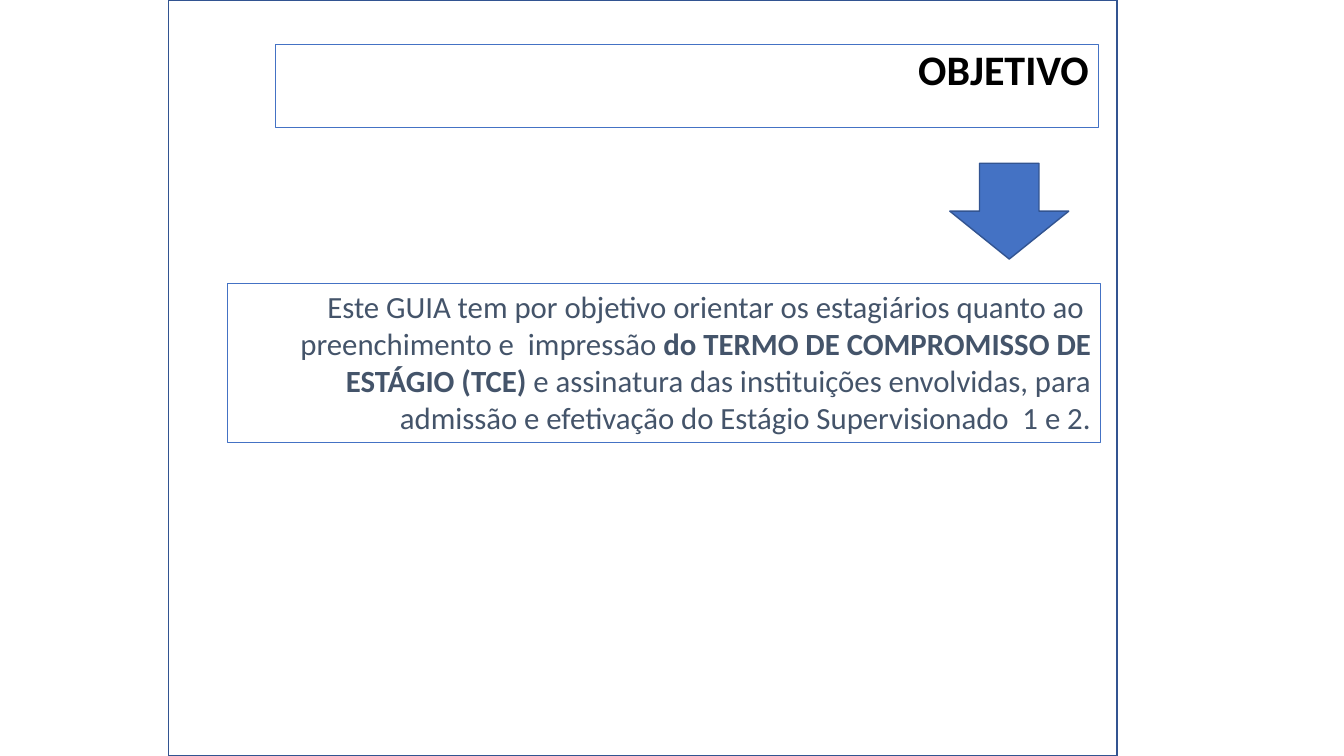
from pptx import Presentation
from pptx.dml.color import RGBColor
from pptx.enum.shapes import MSO_SHAPE
from pptx.enum.text import MSO_ANCHOR, PP_ALIGN
from pptx.util import Inches, Pt

RECT, DOWN_ARROW = MSO_SHAPE.RECTANGLE, MSO_SHAPE.DOWN_ARROW
TOP, RIGHT = MSO_ANCHOR.TOP, PP_ALIGN.RIGHT

# Content: paragraphs of (text, bold) runs
HEADING = [[("OBJETIVO", True)]]
OBJECTIVE = [
    [("Este GUIA tem por objetivo orientar os estagiários quanto ao ", False)],
    [("preenchimento e  impressão ", False),
     ("do TERMO DE COMPROMISSO DE ESTÁGIO (TCE)", True),
     (" e assinatura das instituições envolvidas, para admissão e efetivação "
      "do Estágio Supervisionado  1 e 2.", False)],
]
FONT = "Calibri"
BLUE, DARK_BLUE, SLATE = "4472C4", "325491", "44546A"
WHITE, BLACK = "FFFFFF", "000000"


def color(hex_string):
    return RGBColor.from_string(hex_string)


def add_box(kind, box, line, width, fill=None):
    shape = slide.shapes.add_shape(kind, *map(Inches, box))
    shape.shadow.inherit = False
    if fill:
        shape.fill.solid()
        shape.fill.fore_color.rgb = color(fill)
    else:
        shape.fill.background()
    shape.line.color.rgb = color(line)
    shape.line.width = Pt(width)
    return shape


def write(shape, paragraphs, size, font_color, spacing=1.0, before=0):
    frame = shape.text_frame
    frame.word_wrap = True
    frame.vertical_anchor = TOP
    for i, runs in enumerate(paragraphs):
        paragraph = frame.add_paragraph() if i else frame.paragraphs[0]
        paragraph.alignment = RIGHT
        paragraph.line_spacing = spacing
        paragraph.space_before = Pt(before)
        paragraph.font.name = FONT
        paragraph.font.size = Pt(size)
        paragraph.font.color.rgb = color(font_color)
        for text, bold in runs:
            run = paragraph.add_run()
            run.text = text
            run.font.bold = bold


prs = Presentation()
prs.slide_width, prs.slide_height = Inches(13.33), Inches(7.5)
slide = prs.slides.add_slide(prs.slide_layouts[6])

# Page frame
add_box(RECT, (1.67, 0, 9.41, 7.5), DARK_BLUE, 1, WHITE)

# Objective text
objective = add_box(RECT, (2.26, 2.81, 8.66, 1.58), BLUE, 0.75)
write(objective, OBJECTIVE, 22, SLATE)

# Heading and the arrow below it
heading = add_box(RECT, (2.73, 0.44, 8.17, 0.83), BLUE, 0.75)
write(heading, HEADING, 30, BLACK, spacing=0.9, before=10)
add_box(DOWN_ARROW, (9.42, 1.62, 1.18, 0.95), DARK_BLUE, 1, BLUE)

prs.save("out.pptx")
